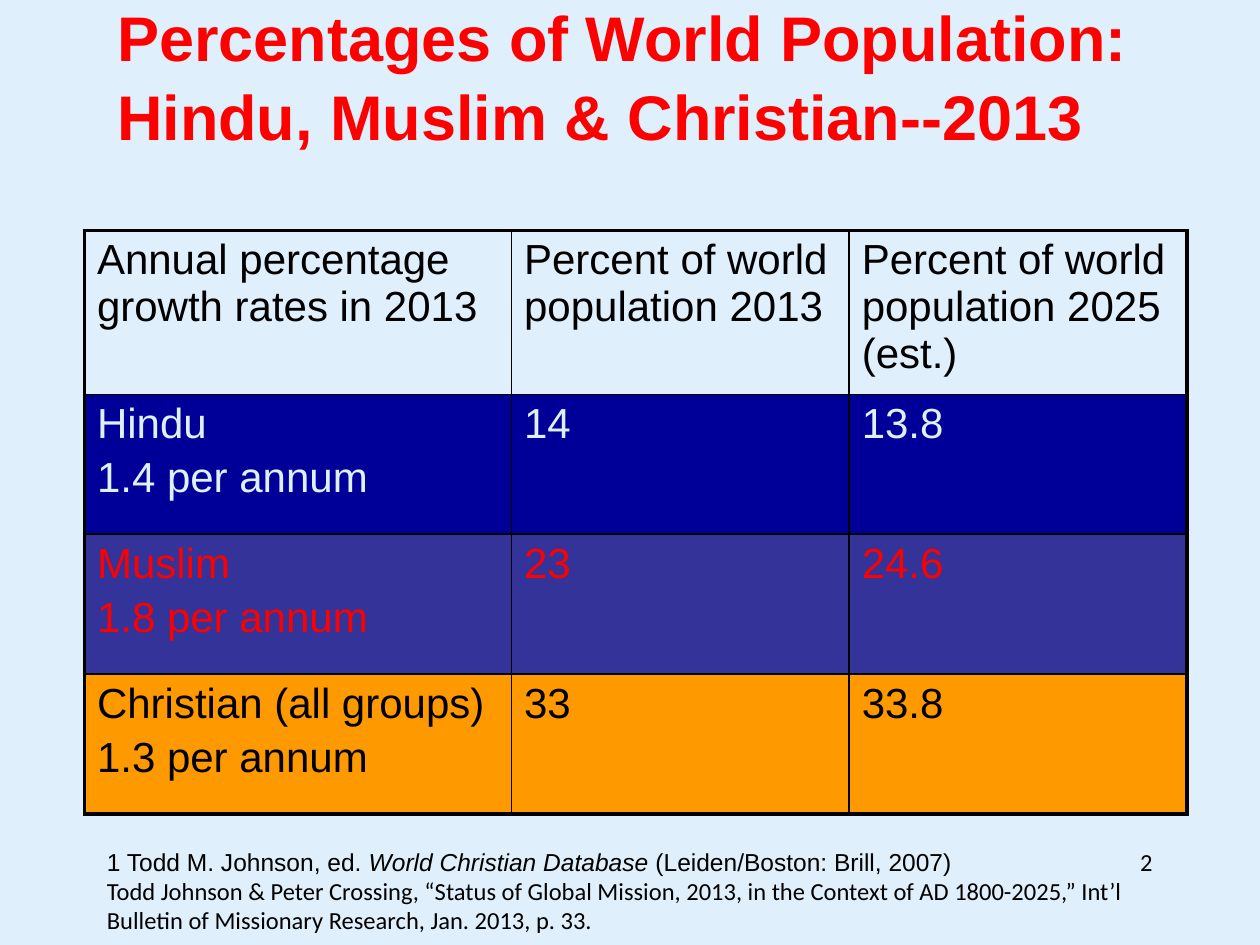
"""Build a slide comparing Hindu, Muslim and Christian shares of world population."""
import pptx
import pptx.dml.color
import pptx.enum.text
import pptx.oxml
import pptx.oxml.ns
import pptx.util
from pptx.dml.color import RGBColor
from pptx.util import Inches, Pt

BLACK = RGBColor(0x00, 0x00, 0x00)
RED = RGBColor(0xFF, 0x00, 0x00)
PALE_BLUE = RGBColor(0xE0, 0xEF, 0xFC)
NAVY = RGBColor(0x00, 0x00, 0x99)
INDIGO = RGBColor(0x33, 0x33, 0x99)
ORANGE = RGBColor(0xFF, 0x99, 0x00)
SHADOW = RGBColor(0x0A, 0x24, 0x40)

TITLE = "Percentages of World Population: Hindu, Muslim & Christian--2013"
ROWS = [
    (None, BLACK, ["Annual percentage growth rates in 2013",
                   "Percent of world population 2013",
                   "Percent of world population 2025 (est.)"]),
    (NAVY, PALE_BLUE, ["Hindu\n1.4 per annum", "14", "13.8"]),
    (INDIGO, RED, ["Muslim\n1.8 per annum", "23", "24.6"]),
    (ORANGE, BLACK, ["Christian (all groups)\n1.3 per annum", "33", "33.8"]),
]
COLUMN_WIDTHS = [3.39, 2.68, 2.68]
ROW_HEIGHTS = [1.3, 1.11, 1.11, 1.11]
SOURCES = [
    [("1 Todd M. Johnson, ed. ", "Arial", False),
     ("World Christian Database", "Arial", True),
     (" (Leiden/Boston: Brill, 2007)", "Arial", False),
     ("\t2", "Calibri", False)],
    [("Todd Johnson & Peter Crossing, “Status of Global Mission, 2013, in the "
      "Context of AD 1800-2025,” Int’l Bulletin of Missionary Research, "
      "Jan. 2013, p. 33.", "Calibri", False)],
]
PAGE_NUMBER_TAB = 8.2
OUTER_BORDER, INNER_BORDER = 2.25, 1


def parse_element(tag, attributes, content=""):
    namespace = pptx.oxml.ns.nsdecls("a")
    return pptx.oxml.parse_xml(f"<a:{tag} {namespace} {attributes}>{content}</a:{tag}>")


def format_font(font, name, size, color):
    font.name = name
    font.size = Pt(size)
    font.color.rgb = color


def add_title(slide):
    title = slide.shapes.title
    title.left, title.top = Inches(0.83), Inches(0)
    title.width, title.height = Inches(8.83), Inches(1.17)
    frame = title.text_frame
    frame.text = TITLE
    frame.word_wrap = True
    frame.auto_size = pptx.enum.text.MSO_AUTO_SIZE.NONE
    frame.vertical_anchor = pptx.enum.text.MSO_ANCHOR.MIDDLE
    paragraph = frame.paragraphs[0]
    paragraph.alignment = pptx.enum.text.PP_ALIGN.LEFT
    paragraph.line_spacing = 1.05
    run = paragraph.runs[0]
    format_font(run.font, "Arial", 36, RED)
    run.font.bold = True
    properties = run.font._element
    shadow = parse_element(
        "effectLst", "",
        f'<a:outerShdw dist="35921" dir="2700000"><a:srgbClr val="{SHADOW}"/></a:outerShdw>')
    properties.find(pptx.oxml.ns.qn("a:solidFill")).addnext(shadow)


def set_borders(cell, row, column):
    on_edge = {
        "lnL": column == 0,
        "lnR": column == len(COLUMN_WIDTHS) - 1,
        "lnT": row == 0,
        "lnB": row == len(ROWS) - 1,
    }
    properties = cell._tc.get_or_add_tcPr()
    for position, (tag, outer) in enumerate(on_edge.items()):
        width = Pt(OUTER_BORDER if outer else INNER_BORDER)
        line = parse_element(tag, f'w="{width}"',
                             f'<a:solidFill><a:srgbClr val="{BLACK}"/></a:solidFill>')
        properties.insert(position, line)


def fill_cell(cell, text, fill, color):
    if fill is None:
        cell.fill.background()
    else:
        cell.fill.solid()
        cell.fill.fore_color.rgb = fill
    cell.text_frame.text = text
    for index, paragraph in enumerate(cell.text_frame.paragraphs):
        if index:
            paragraph.space_before = Pt(4)
        format_font(paragraph.runs[0].font, "Arial", 24, color)


def add_population_table(slide):
    table = slide.shapes.add_table(
        len(ROWS), len(COLUMN_WIDTHS), Inches(0.67), Inches(1.83),
        Inches(sum(COLUMN_WIDTHS)), Inches(sum(ROW_HEIGHTS))).table
    table.first_row = table.horz_banding = False
    for column, width in zip(table.columns, COLUMN_WIDTHS):
        column.width = Inches(width)
    for row, height in zip(table.rows, ROW_HEIGHTS):
        row.height = Inches(height)
    for row, (fill, color, texts) in enumerate(ROWS):
        for column, text in enumerate(texts):
            cell = table.cell(row, column)
            set_borders(cell, row, column)
            fill_cell(cell, text, fill, color)


def add_sources(slide):
    box = slide.shapes.add_textbox(Inches(0.75), Inches(6.67), Inches(8.75), Inches(0.81))
    frame = box.text_frame
    frame.word_wrap = True
    for index, parts in enumerate(SOURCES):
        paragraph = frame.add_paragraph() if index else frame.paragraphs[0]
        if any("\t" in text for text, name, italic in parts):
            tab = f'<a:tab pos="{Inches(PAGE_NUMBER_TAB)}" algn="l"/>'
            paragraph._p.get_or_add_pPr().append(parse_element("tabLst", "", tab))
        for text, name, italic in parts:
            run = paragraph.add_run()
            run.text = text
            format_font(run.font, name, 14, BLACK)
            run.font.italic = italic


def main():
    presentation = pptx.Presentation()
    presentation.slide_width, presentation.slide_height = Inches(10), Inches(7.5)
    slide = presentation.slides.add_slide(presentation.slide_layouts[5])
    slide.background.fill.solid()
    slide.background.fill.fore_color.rgb = PALE_BLUE
    add_title(slide)
    add_population_table(slide)
    add_sources(slide)
    presentation.save("out.pptx")


if __name__ == "__main__":
    main()
